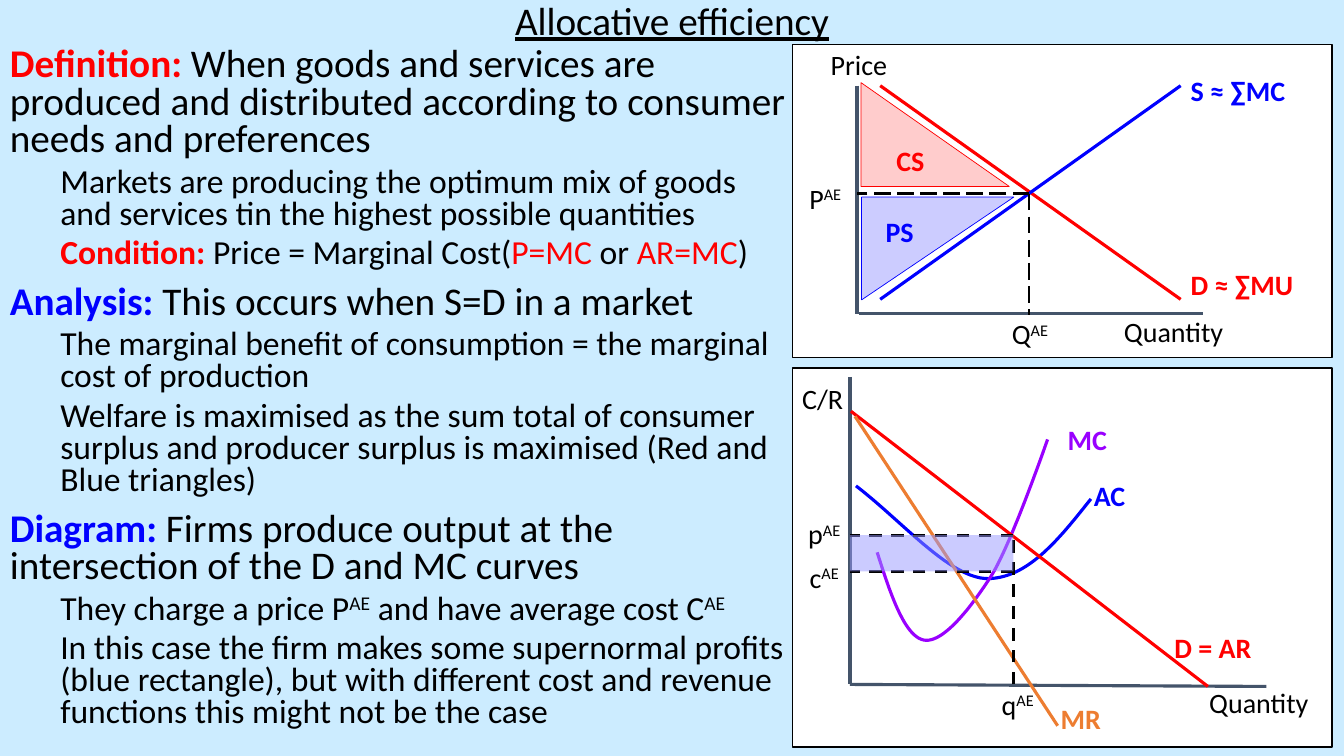
from dataclasses import dataclass
from typing import Optional

from lxml.etree import SubElement
from pptx import Presentation
from pptx.dml.color import RGBColor
from pptx.enum.dml import MSO_LINE
from pptx.enum.shapes import MSO_CONNECTOR, MSO_SHAPE
from pptx.enum.text import MSO_ANCHOR, MSO_AUTO_SIZE, PP_ALIGN
from pptx.oxml.ns import qn
from pptx.util import Inches, Pt

Point = tuple[float, float]
Box = tuple[float, float, float, float]

# The grid has square cells: 133.3 columns by 75 rows.
CELL = Inches(0.1)
COLUMNS, ROWS = 133.3, 75


@dataclass(frozen=True)
class Theme:
    font: str = "Calibri"
    heading: int = 28
    detail: int = 24
    label: int = 20
    background: str = "CCECFF"
    panel: str = "FFFFFF"
    ink: str = "000000"
    axis: str = "44546A"
    red: str = "FF0000"
    blue: str = "0000FF"
    purple: str = "9900FF"
    orange: str = "ED7D31"
    consumer: str = "FFCCCC"
    producer: str = "CCCCFF"
    profit: str = "9999FF"


THEME = Theme()


@dataclass(frozen=True)
class Words:
    text: str
    color: str = THEME.ink
    bold: bool = False
    superscript: bool = False


@dataclass(frozen=True)
class Note:
    words: tuple[Words, ...]
    level: int = 1


@dataclass(frozen=True)
class Line:
    start: Point
    end: Point
    color: str = THEME.axis
    width: float = 2.25
    dash: Optional[MSO_LINE] = None


@dataclass(frozen=True)
class Label:
    text: str
    box: Box
    color: str = THEME.ink
    curve: bool = False
    superscript: str = ""


@dataclass(frozen=True)
class Curve:
    """A chain of Bezier segments: a start, then three points for each segment."""
    points: tuple[Point, ...]
    color: str


@dataclass(frozen=True)
class Surplus:
    text: str
    box: Box
    fill: str
    color: str
    rotation: int = 0
    direction: str = "horz"


def cells(*counts: float) -> list[int]:
    return [round(count * CELL) for count in counts]


def add_words(paragraph, text: str, *, size: int, color: str = THEME.ink, bold: bool = False,
              underline: bool = False, superscript: bool = False) -> None:
    run = paragraph.add_run()
    run.text = text
    font = run.font
    font.name, font.size, font.bold, font.underline = THEME.font, Pt(size), bold, underline
    font.color.rgb = RGBColor.from_string(color)
    if superscript:
        run._r.get_or_add_rPr().set("baseline", "30000")


def draw_line(shapes, line: Line) -> None:
    connector = shapes.add_connector(MSO_CONNECTOR.STRAIGHT, *cells(*line.start, *line.end))
    connector.line.color.rgb = RGBColor.from_string(line.color)
    connector.line.width = Pt(line.width)
    if line.dash is not None:
        connector.line.dash_style = line.dash
    SubElement(connector._element.spPr, qn("a:effectLst"))


def draw_label(shapes, label: Label) -> None:
    frame = shapes.add_textbox(*cells(*label.box)).text_frame
    frame.word_wrap = True
    paragraph = frame.paragraphs[0]
    paragraph.alignment = PP_ALIGN.LEFT if label.curve else PP_ALIGN.CENTER
    add_words(paragraph, label.text, size=THEME.label, color=label.color, bold=label.curve)
    if label.superscript:
        add_words(paragraph, label.superscript, size=THEME.label, superscript=True)


def draw_area(shapes, kind: MSO_SHAPE, box: Box, fill: str, *, outline: Optional[str] = None,
              width: float = 1, opacity: int = 100):
    area = shapes.add_shape(kind, *cells(*box))
    area.shadow.inherit = False
    area.fill.solid()
    area.fill.fore_color.rgb = RGBColor.from_string(fill)
    if opacity < 100:
        tint = area._element.spPr.find(qn("a:solidFill"))[0]
        SubElement(tint, qn("a:alpha")).set("val", str(opacity * 1000))
    if outline:
        area.line.color.rgb = RGBColor.from_string(outline)
        area.line.width = Pt(width)
    else:
        area.line.fill.background()
    return area


def draw_surplus(shapes, surplus: Surplus) -> None:
    triangle = draw_area(shapes, MSO_SHAPE.RIGHT_TRIANGLE, surplus.box, surplus.fill,
                         outline=surplus.color, width=0.5)
    triangle.rotation = surplus.rotation
    frame = triangle.text_frame
    frame.vertical_anchor = MSO_ANCHOR.MIDDLE
    frame._txBody.bodyPr.set("vert", surplus.direction)
    frame.paragraphs[0].alignment = PP_ALIGN.CENTER
    add_words(frame.paragraphs[0], surplus.text, size=THEME.label, color=surplus.color, bold=True)


def bezier(a: Point, b: Point, c: Point, d: Point, t: float) -> Point:
    u = 1 - t
    return tuple(u**3 * p + 3 * u * u * t * q + 3 * u * t * t * r + t**3 * s
                 for p, q, r, s in zip(a, b, c, d))


def draw_curve(shapes, curve: Curve, steps: int = 24) -> None:
    points = curve.points
    trail = [bezier(*points[first:first + 4], step / steps)
             for first in range(0, len(points) - 1, 3) for step in range(1, steps + 1)]
    builder = shapes.build_freeform(*cells(*points[0]))
    builder.add_line_segments([cells(*point) for point in trail], close=False)
    outline = builder.convert_to_shape()
    outline.shadow.inherit = False
    outline.fill.background()
    outline.line.color.rgb = RGBColor.from_string(curve.color)
    outline.line.width = Pt(2.25)


DRAW = {Line: draw_line, Label: draw_label, Curve: draw_curve, Surplus: draw_surplus}


def draw_diagram(slide, panel: Box, parts: tuple):
    shapes = slide.shapes.add_group_shape().shapes
    draw_area(shapes, MSO_SHAPE.RECTANGLE, panel, THEME.panel, outline=THEME.ink)
    for part in parts:
        DRAW[type(part)](shapes, part)
    return shapes


def draw_notes(slide, notes: tuple[Note, ...], box: Box) -> None:
    frame = slide.shapes.add_textbox(*cells(*box)).text_frame
    frame.word_wrap = True
    for index, note in enumerate(notes):
        paragraph = frame.paragraphs[0] if index == 0 else frame.add_paragraph()
        heading = note.level == 0
        paragraph.level = note.level
        paragraph.line_spacing = 0.8
        paragraph.space_before = Pt(10 if heading else 5)
        paragraph._p.get_or_add_pPr().set("marL", str(cells(5 * note.level)[0]))
        for words in note.words:
            add_words(paragraph, words.text, size=THEME.heading if heading else THEME.detail,
                      color=words.color, bold=words.bold, superscript=words.superscript)


def heading(term: str, text: str, color: str = THEME.blue) -> Note:
    return Note((Words(term + " ", color, True), Words(text)), 0)


AE = Words("AE", superscript=True)
NOTES = (
    heading("Definition:", "When goods and services are produced and distributed according to "
            "consumer needs and preferences", THEME.red),
    Note((Words("Markets are producing the optimum mix of goods and services tin the highest "
                "possible quantities"),)),
    Note((Words("Condition:", THEME.red, True), Words(" Price = Marginal Cost("),
          Words("P=MC ", THEME.red), Words("or "), Words("AR=MC", THEME.red), Words(")"))),
    heading("Analysis:", "This occurs when S=D in a market"),
    Note((Words("The marginal benefit of consumption = the marginal cost of production"),)),
    Note((Words("Welfare is maximised as the sum total of consumer surplus and producer surplus "
                "is maximised (Red and Blue triangles)"),)),
    heading("Diagram:", "Firms produce output at the intersection of the D and MC curves"),
    Note((Words("They charge a price P"), AE, Words(" and have average cost C"), AE)),
    Note((Words("In this case the firm makes some supernormal profits (blue rectangle), but with "
                "different cost and revenue functions this might not be the case"),)),
)

BALANCE = (102.1, 19.2)
MARKET = (
    Line((87.3, 8.5), (117.1, 29.7), THEME.red),
    Label("D ≈ ∑MU", (117.1, 26, 13.2, 4.4), THEME.red, True),
    Line((87.3, 29.7), (117.1, 8.5), THEME.blue),
    Label("S ≈ ∑MC", (117.1, 6.8, 13.2, 4.4), THEME.blue, True),
    Line((85, 8.5), (85, 31.2)),
    Line((85.2, 31.1), (119.3, 31.1)),
    Label("Quantity", (109.8, 30.7, 13.2, 3.4)),
    Label("Price", (78.6, 4.2, 13.2, 3.4)),
    Line(BALANCE, (102.1, 31.3), THEME.ink, 1.5, MSO_LINE.LONG_DASH),
    Line(BALANCE, (85, 19.2), THEME.ink, 1.5, MSO_LINE.LONG_DASH),
    Label("P", (78.6, 17.5, 6.5, 3.4), superscript="AE"),
    Label("Q", (98.7, 30.9, 6.9, 3.4), superscript="AE"),
)
SURPLUSES = (
    Surplus("CS", (85.4, 8.2, 14.7, 10.3), THEME.consumer, THEME.red),
    Surplus("PS", (87.9, 17.1, 10.2, 15.1), THEME.producer, THEME.blue, 90, "vert270"),
)

AXIS, OUTPUT, PRICE, COST, BASE = 84.3, 100.5, 53.1, 56.7, 67.9
FIRM = (
    Line((AXIS, 37.4), (AXIS, BASE)),
    Line((AXIS, BASE), (125.6, 68.1)),
    Label("Quantity", (118.4, 67.5, 12.9, 4.5)),
    Label("C/R", (77.3, 37.4, 8.6, 3.8)),
    Label("AC", (107.5, 47, 6.3, 4.4), THEME.blue, True),
    Curve(((108.2, 49.5), (105.1, 53.4), (102.1, 57.2), (98.2, 57.4),
           (94.4, 57.6), (89.6, 51.8), (84.9, 48.2)), THEME.blue),
    Curve(((87, 54.8), (88.3, 58.9), (89.7, 63.1), (91.6, 63.5), (93.5, 63.9), (96.3, 60.3),
           (98.4, 57), (100.4, 53.7), (103.9, 43.6), (103.9, 43.6)), THEME.purple),
    Label("MC", (104.9, 41.4, 6.3, 4.4), THEME.purple, True),
    Line((84.4, 40.8), (119.8, 68.1), THEME.red),
    Label("D = AR", (115.5, 62.1, 10.1, 7.1), THEME.red, True),
    Line((84.8, 41.3), (104.9, 72), THEME.orange),
    Label("MR", (104.2, 69.1, 10.1, 3.3), THEME.orange, True),
    Label("q", (97.6, 67.7, 6.7, 4.4), superscript="AE"),
    Label("p", (78.4, 50.8, 6.7, 4.4), superscript="AE"),
    Label("c", (78.4, 55.1, 6.7, 4.4), superscript="AE"),
    Line((OUTPUT, BASE), (OUTPUT, PRICE), THEME.ink, dash=MSO_LINE.DASH),
    Line((OUTPUT, COST), (AXIS, COST), THEME.ink, dash=MSO_LINE.DASH),
    Line((OUTPUT, PRICE), (AXIS, PRICE), THEME.ink, dash=MSO_LINE.DASH),
)


def main() -> None:
    deck = Presentation()
    deck.slide_width, deck.slide_height = cells(COLUMNS, ROWS)
    slide = deck.slides.add_slide(deck.slide_layouts[5])
    slide.background.fill.solid()
    slide.background.fill.fore_color.rgb = RGBColor.from_string(THEME.background)

    title = slide.shapes.title
    title.left, title.top, title.width, title.height = cells(0, 0, COLUMNS, 5.1)
    title.text_frame.auto_size = MSO_AUTO_SIZE.NONE
    title.text_frame.vertical_anchor = MSO_ANCHOR.TOP
    topic = title.text_frame.paragraphs[0]
    topic.alignment, topic.line_spacing = PP_ALIGN.CENTER, 0.8
    add_words(topic, "Allocative efficiency", size=THEME.heading, underline=True)

    draw_notes(slide, NOTES, (0, 4.2, 79.3, 70.8))
    draw_diagram(slide, (78.6, 4.4, 53.5, 31.1), MARKET + SURPLUSES)
    firm = draw_diagram(slide, (78.6, 36.5, 53.5, 37.6), FIRM)
    draw_area(firm, MSO_SHAPE.RECTANGLE, (AXIS, PRICE, OUTPUT - AXIS, COST - PRICE),
              THEME.profit, opacity=50)
    deck.save("out.pptx")


if __name__ == "__main__":
    main()
